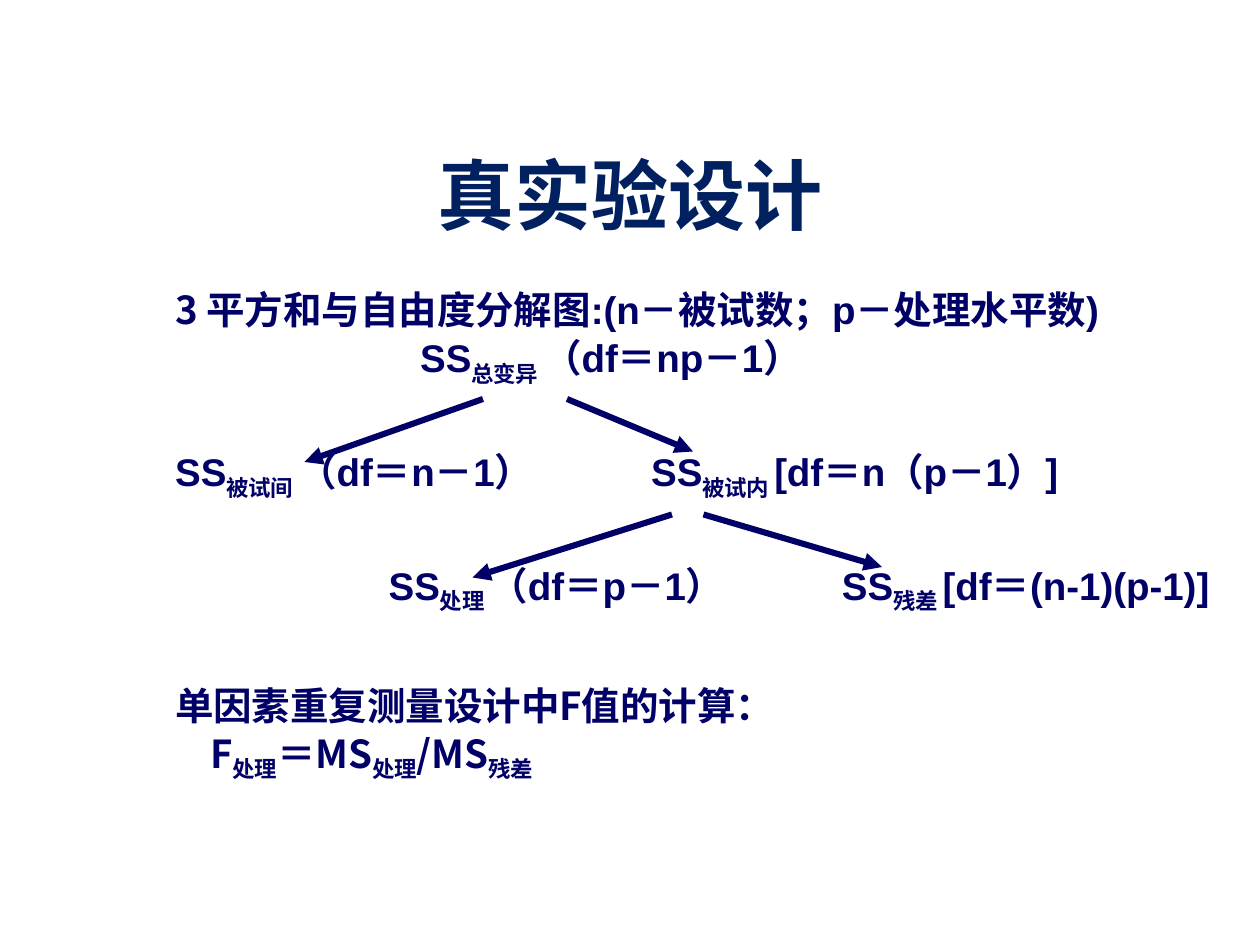
from dataclasses import dataclass

from pptx import Presentation
from pptx import util as u
from pptx.dml.color import RGBColor
from pptx.enum import shapes, text
from pptx.oxml import ns, xmlchemy

Pt = u.Pt


@dataclass(frozen=True)
class Theme:
    title: RGBColor = RGBColor(0x00, 0x20, 0x60)
    ink: RGBColor = RGBColor(0x00, 0x00, 0x66)
    latin: str = "Arial"
    cjk: str = "Noto Sans CJK SC"
    title_size: int = 44
    body_size: int = 22
    line_height: int = 31
    branch_gap: int = 34
    arrow_width: float = 3.5


THEME = Theme()


def add_child(parent, tag, **attrs):
    child = xmlchemy.OxmlElement(tag)
    for name, value in attrs.items():
        child.set(name, str(value))
    parent.append(child)
    return child


def add_run(p, words, font, size, color, sub=False):
    r = p.add_run()
    r.text = words
    r.font.name, r.font.size, r.font.bold = font, Pt(size), True
    r.font.color.rgb = color
    rPr = r.font._element
    if sub:
        rPr.set("baseline", "-25000")
    rPr.find(ns.qn("a:latin")).addnext(
        xmlchemy.OxmlElement("a:ea"))
    rPr.find(ns.qn("a:ea")).set("typeface", THEME.cjk)


def add_title(s, box, words):
    sp = s.shapes.title
    sp.left, sp.top, sp.width, sp.height = (Pt(v) for v in box)
    tf = sp.text_frame
    tf.vertical_anchor = text.MSO_ANCHOR.MIDDLE
    p = tf.paragraphs[0]
    p.alignment = text.PP_ALIGN.CENTER
    add_run(p, words, THEME.cjk, THEME.title_size, THEME.title)


def add_formulas(s, box, rows):
    sp = s.shapes.add_textbox(*(Pt(v) for v in box))
    tf = sp.text_frame
    tf.word_wrap = True
    tf.margin_top = tf.margin_right = 0
    for i, (font, gap, tabs, parts) in enumerate(rows):
        p = tf.add_paragraph() if i else tf.paragraphs[0]
        p.line_spacing = Pt(THEME.line_height)
        p.space_before = Pt(gap)
        if tabs:
            stops = add_child(p._p.get_or_add_pPr(), "a:tabLst")
            for stop in tabs:
                add_child(stops, "a:tab", pos=int(Pt(stop)), algn="l")
        for k, words in enumerate(parts):
            add_run(p, words, font[k] if isinstance(font, tuple) else font,
                    THEME.body_size, THEME.ink,
                    sub=k % 2 == 1 and not isinstance(font, tuple))


def add_branches(s, box, branches):
    left, top = box[:2]
    for x1, y1, x2, y2 in branches:
        c = s.shapes.add_connector(
            shapes.MSO_CONNECTOR.STRAIGHT,
            Pt(left + x1), Pt(top + y1), Pt(left + x2), Pt(top + y2))
        c.line.color.rgb = THEME.ink
        c.line.width = Pt(THEME.arrow_width)
        add_child(c.line._get_or_add_ln(), "a:tailEnd", type="triangle")
        add_child(c._element.spPr, "a:effectLst")


def main():
    prs = Presentation()
    prs.slide_width, prs.slide_height = Pt(720), Pt(540)
    s = prs.slides.add_slide(prs.slide_layouts[5])
    add_title(s, (36, 65.5, 648, 90), "真实验设计")

    body = (93, 159, 627, 411)
    gap = THEME.branch_gap
    rows = [
        ((THEME.cjk, THEME.latin), 0, (),
         ["3 ", "平方和与自由度分解图:(n－被试数；p－处理水平数)"]),
        (THEME.latin, 0, (140,), ["\tSS", "总变异 ", "（df＝np－1）"]),
        (THEME.latin, gap, (272,),
         ["SS", "被试间 ", "（df＝n－1）\tSS", "被试内 ", "[df＝n（p－1）]"]),
        (THEME.latin, gap, (122, 381),
         ["\tSS", "处理 ", "（df＝p－1）\tSS", "残差 ", "[df＝(n-1)(p-1)]"]),
        (THEME.cjk, gap, (), ["单因素重复测量设计中F值的计算："]),
        (THEME.cjk, 0, (20,),
         ["\tF", "处理", "＝MS", "处理", "/MS", "残差"]),
    ]
    add_formulas(s, body, rows)
    add_branches(s, body, [
        (183, 69, 81, 105), (231, 69, 303, 99),
        (291, 135, 177, 171), (309, 135, 411, 165),
    ])
    prs.save("out.pptx")


if __name__ == "__main__":
    main()
